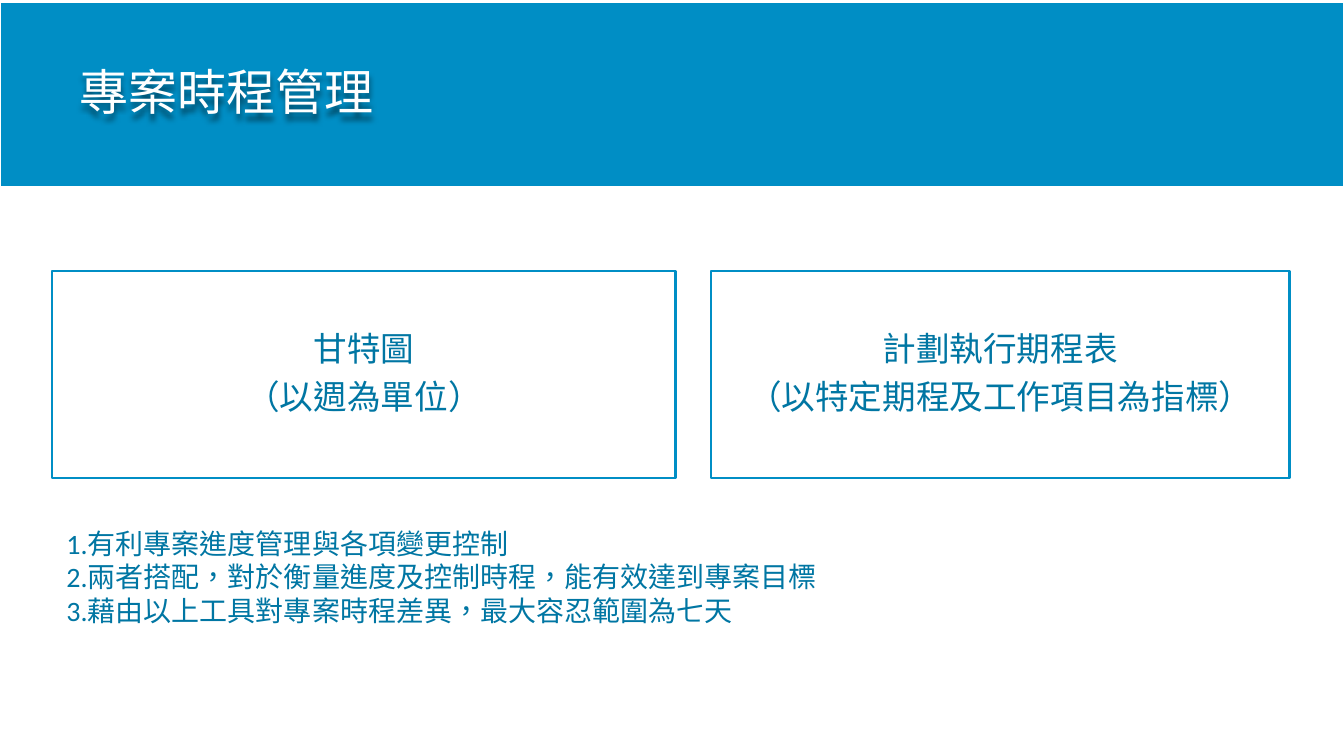
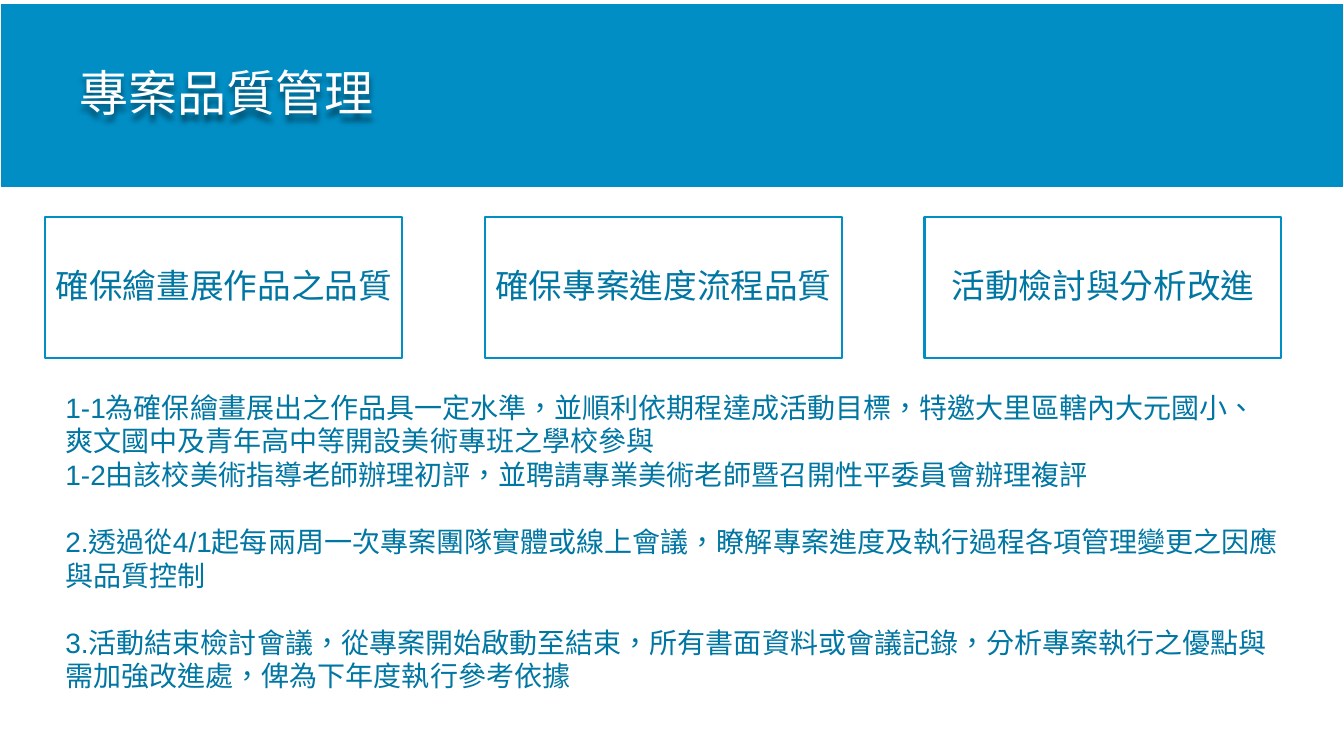
from lxml import etree
from pptx import Presentation
from pptx import util as u
from pptx.dml.color import RGBColor
from pptx.enum import lang, shapes, text
from pptx.oxml.ns import qn

PX = 9144
WIDE, HIGH = 1333, 750
HUE = {"band": "008EC5", "ink": "0076A3", "paper": "FFFFFF", "shade": "000000"}

TIME_BOXES = [
    (52, 618, ["甘特圖", "（以週為單位）"]),
    (705, 574, ["計劃執行期程表", "（以特定期程及工作項目為指標）"]),
]
TIME_NOTES = [
    ["1.有利專案進度管理與各項變更控制",
     "2.兩者搭配，對於衡量進度及控制時程，能有效達到專案目標",
     "3.藉由以上工具對專案時程差異，最大容忍範圍為七天"],
]
GOALS = ["確保繪畫展作品之品質", "確保專案進度流程品質", "活動檢討與分析改進"]
GOAL_NOTES = [
    ["1-1為確保繪畫展出之作品具一定水準，並順利依期程達成活動目標，"
     "特邀大里區轄內大元國小、爽文國中及青年高中等開設美術專班之學校參與",
     "1-2由該校美術指導老師辦理初評，並聘請專業美術老師暨召開性平委員會辦理複評"],
    ["2.透過從4/1起每兩周一次專案團隊實體或線上會議，"
     "瞭解專案進度及執行過程各項管理變更之因應與品質控制"],
    ["3.活動結束檢討會議，從專案開始啟動至結束，所有書面資料或會議記錄，"
     "分析專案執行之優點與需加強改進處，俾為下年度執行參考依據"],
]


def color(name):
    """Return a palette colour."""
    return RGBColor.from_string(HUE[name])


def span(*sizes):
    """Turn px lengths into EMU."""
    return [u.Emu(size * PX) for size in sizes]


def frame(shape, anchor, left=10, edge=10):
    """Set up the text frame of a shape and return it."""
    tf = shape.text_frame
    tf.word_wrap = True
    tf.auto_size = text.MSO_AUTO_SIZE.NONE
    tf.vertical_anchor = anchor
    tf.margin_left, tf.margin_right, tf.margin_top, tf.margin_bottom = span(left, 10, edge, edge)
    return tf


def write(tf, lines, size, face, hue, align=text.PP_ALIGN.LEFT):
    """Write one paragraph per line and return the paragraphs."""
    paras = []
    for line in lines:
        para = tf.add_paragraph() if paras else tf.paragraphs[0]
        para.alignment = align
        run = para.add_run()
        run.text = line
        font = run.font
        font.size, font.name = u.Pt(size), face
        font.color.rgb = color(hue)
        font.language_id = lang.MSO_LANGUAGE_ID.TRADITIONAL_CHINESE
        paras.append(para)
    return paras


def tighten(paras, size):
    """Give paragraphs the tight leading of titles and boxes."""
    for para in paras:
        para.line_spacing = 0.9
        para.space_after = u.Pt(round(size * 0.35, 1))


def panel(slide, area, fill, line):
    """Add a plain outlined rectangle."""
    shape = slide.shapes.add_shape(shapes.MSO_SHAPE.RECTANGLE, *span(*area))
    shape.shadow.inherit = False
    shape.fill.solid()
    shape.fill.fore_color.rgb = color(fill)
    shape.line.color.rgb = color(line)
    shape.line.width = u.Pt(1.5)
    return shape


def shade(shape):
    """Cast a soft shadow below the text of an unfilled shape."""
    props = shape._element.spPr
    effects = etree.SubElement(props, qn("a:effectLst"))
    cast = etree.SubElement(effects, qn("a:outerShdw"), blurRad="50800",
                            dist="50800", dir="5400000", rotWithShape="0")
    tint = etree.SubElement(cast, qn("a:srgbClr"), val=HUE["shade"])
    etree.SubElement(tint, qn("a:alpha"), val="50000")


def start(deck, words, top):
    """Add a slide with a title on a full-width band."""
    slide = deck.slides.add_slide(deck.slide_layouts[5])
    area = (0, top, WIDE, 184)
    title = slide.shapes.title
    title.left, title.top, title.width, title.height = span(*area)
    title._element.addprevious(panel(slide, area, "band", "paper")._element)
    tf = frame(title, text.MSO_ANCHOR.MIDDLE, left=79)
    tighten(write(tf, [words], 35, "Karla", "paper"), 35)
    shade(title)
    return slide


def box(slide, area, lines):
    """Add an outlined box with centred lines."""
    shape = panel(slide, area, "paper", "band")
    tf = frame(shape, text.MSO_ANCHOR.MIDDLE)
    tighten(write(tf, lines, 24, "Arial", "ink", text.PP_ALIGN.CENTER), 24)


def notes(slide, area, groups, face):
    """Add body text with a gap between its groups."""
    tf = frame(slide.shapes.add_textbox(*span(*area)), text.MSO_ANCHOR.TOP, edge=5)
    paras = write(tf, [line for group in groups for line in group], 20, face, "ink")
    index = 0
    for group in groups[:-1]:
        index += len(group)
        paras[index].space_before = u.Pt(24)


def main():
    """Build the two slides."""
    deck = Presentation()
    deck.slide_width, deck.slide_height = span(WIDE, HIGH)

    slide = start(deck, "專案時程管理", 2)
    for left, width, lines in TIME_BOXES:
        box(slide, (left, 269, width, 205), lines)
    notes(slide, (56, 517, 1077, 162), TIME_NOTES, "Calibri")

    slide = start(deck, "專案品質管理", 3)
    for index, goal in enumerate(GOALS):
        box(slide, (45 + index * 436, 215, 354, 140), [goal])
    notes(slide, (55, 382, 1224, 346), GOAL_NOTES, "Arial")

    deck.save("out.pptx")


if __name__ == "__main__":
    main()
